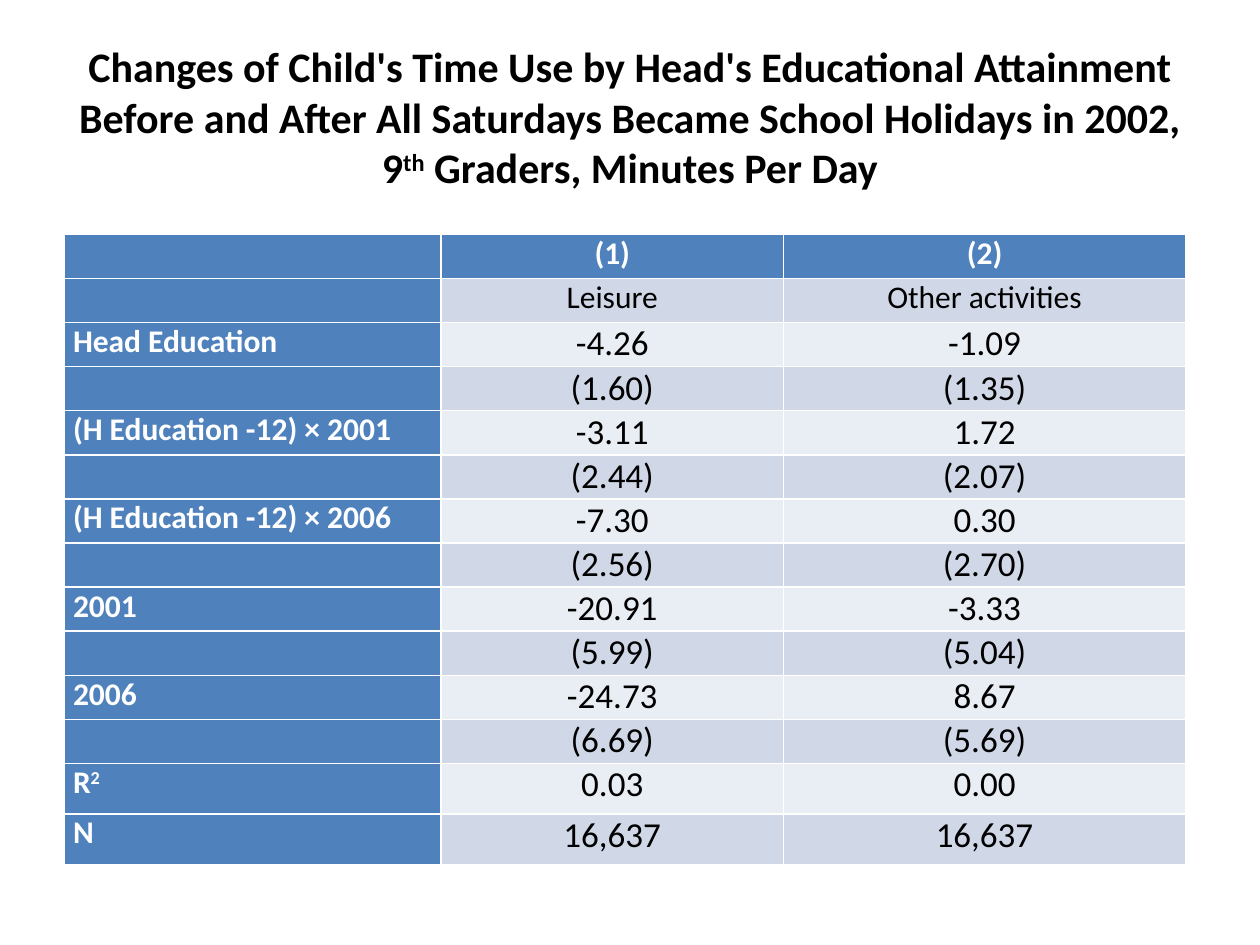
from pptx import Presentation
from pptx.dml.color import RGBColor
from pptx.enum.text import MSO_ANCHOR, PP_ALIGN
from pptx.util import Inches, Pt

CENTER, JUSTIFY, LEFT = PP_ALIGN.CENTER, PP_ALIGN.JUSTIFY, PP_ALIGN.LEFT
MIDDLE = MSO_ANCHOR.MIDDLE

BLACK = RGBColor(0x00, 0x00, 0x00)
WHITE = RGBColor(0xFF, 0xFF, 0xFF)
BLUE = RGBColor(0x4F, 0x81, 0xBD)
DARK_BAND = RGBColor(0xD0, 0xD8, 0xE8)
LIGHT_BAND = RGBColor(0xE9, 0xED, 0xF4)

TITLE = ("Changes of Child's Time Use by Head's Educational Attainment "
         "Before and After All Saturdays Became School Holidays in 2002, "
         "9^th^ Graders, Minutes Per Day")
ESTIMATES = [
    ("", "(1)", "(2)"),
    ("", "Leisure", "Other activities"),
    ("Head Education", "-4.26", "-1.09"),
    ("", "(1.60)", "(1.35)"),
    ("(H Education -12) × 2001", "-3.11", "1.72"),
    ("", "(2.44)", "(2.07)"),
    ("(H Education -12) × 2006", "-7.30", "0.30"),
    ("", "(2.56)", "(2.70)"),
    ("2001", "-20.91", "-3.33"),
    ("", "(5.99)", "(5.04)"),
    ("2006", "-24.73", "8.67"),
    ("", "(6.69)", "(5.69)"),
    ("R^2^", "0.03", "0.00"),
    ("N", "16,637", "16,637"),
]
COLUMN_WIDTHS = [2.99, 2.72, 3.19]
ROW_HEIGHT, SUMMARY_HEIGHT = 0.35, 0.4
SUMMARY_START = len(ESTIMATES) - 2
CELL_MARGINS = {"margin_left": Inches(0.07), "margin_right": Inches(0.07),
                "margin_top": 0, "margin_bottom": 0}


def write_text(frame, text, size, color, bold, align):
    """Write one paragraph, raising the parts enclosed in carets."""
    paragraph = frame.paragraphs[0]
    paragraph.alignment = align
    for position, part in enumerate(text.split("^")):
        if not part:
            continue
        run = paragraph.add_run()
        run.text = part
        run.font.color.rgb = color
        for name, value in {"name": "Calibri", "size": Pt(size), "bold": bold}.items():
            setattr(run.font, name, value)
        if position % 2:
            run.font._element.set("baseline", "30000")


def add_title(slide):
    """Place and fill the title placeholder."""
    title = slide.shapes.title
    box = {"left": 0.5, "top": 0.3, "width": 9, "height": 1.25}
    for name, value in box.items():
        setattr(title, name, Inches(value))
    title.text_frame.vertical_anchor = MIDDLE
    write_text(title.text_frame, TITLE, 24, BLACK, True, CENTER)


def format_cell(cell, row, column, text):
    """Style and fill a cell according to its role in the table."""
    for name, value in CELL_MARGINS.items():
        setattr(cell, name, value)
    heading = row == 0 or column == 0
    band = DARK_BAND if row % 2 else LIGHT_BAND
    cell.fill.solid()
    cell.fill.fore_color.rgb = BLUE if heading else band
    size = 18 if heading or row == 1 else 20
    label_align = LEFT if row >= SUMMARY_START else JUSTIFY
    align = CENTER if column else label_align
    write_text(cell.text_frame, text, size, WHITE if heading else BLACK, heading, align)


def add_estimates(slide):
    """Add the table of regression estimates."""
    heights = [SUMMARY_HEIGHT if row >= SUMMARY_START else ROW_HEIGHT
               for row in range(len(ESTIMATES))]
    table = slide.shapes.add_table(
        len(ESTIMATES), len(COLUMN_WIDTHS), Inches(0.51), Inches(1.86),
        Inches(sum(COLUMN_WIDTHS)), Inches(sum(heights))).table
    table.first_col = True
    for column, width in zip(table.columns, COLUMN_WIDTHS):
        column.width = Inches(width)
    for row, (height, texts) in enumerate(zip(heights, ESTIMATES)):
        table.rows[row].height = Inches(height)
        for column, text in enumerate(texts):
            format_cell(table.cell(row, column), row, column, text)


def main():
    """Build the slide and save the presentation."""
    presentation = Presentation()
    presentation.slide_width = Inches(10)
    presentation.slide_height = Inches(7.5)
    slide = presentation.slides.add_slide(presentation.slide_layouts[5])
    add_title(slide)
    add_estimates(slide)
    presentation.save("out.pptx")


if __name__ == "__main__":
    main()
